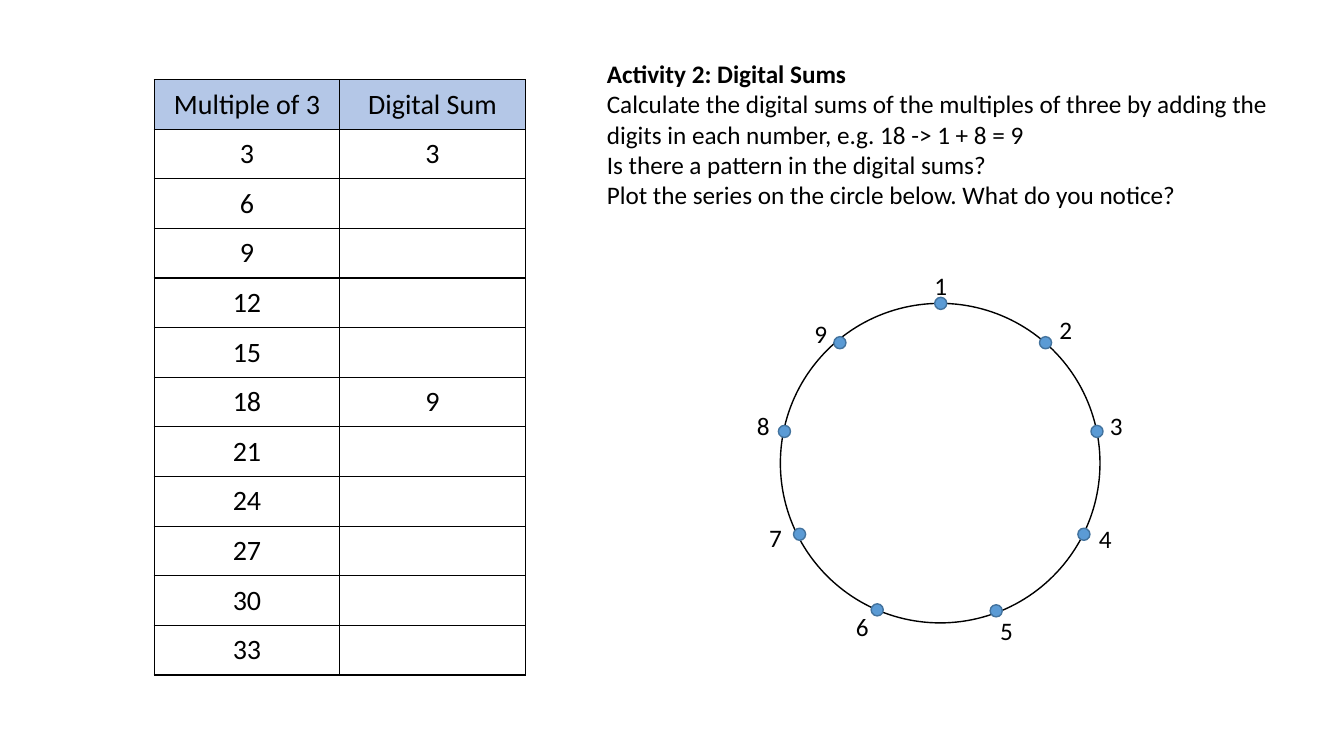
"""Build the digital sums activity slide with a table and a nine-point circle."""
from lxml.etree import SubElement
from pptx import Presentation
from pptx.dml.color import RGBColor
from pptx.enum.shapes import MSO_SHAPE
from pptx.enum.text import MSO_ANCHOR, MSO_AUTO_SIZE, PP_ALIGN
from pptx.oxml import parse_xml
from pptx.oxml.ns import nsdecls, qn
from pptx.util import Inches, Pt


def color(hex_value):
    return RGBColor.from_string(hex_value)


def format_paragraph(paragraph, text, size, bold=False):
    paragraph.text = text
    paragraph.font.name = "Calibri"
    paragraph.font.size = Pt(size)
    paragraph.font.bold = bold
    paragraph.font.color.rgb = color("000000")


presentation = Presentation()
presentation.slide_width = Inches(13.33)
presentation.slide_height = Inches(7.5)
slide = presentation.slides.add_slide(presentation.slide_layouts[6])

known_sums = {3: "3", 18: "9"}
rows = [("Multiple of 3", "Digital Sum")]
rows += [(str(multiple), known_sums.get(multiple, "")) for multiple in range(3, 34, 3)]
table = slide.shapes.add_table(
    len(rows), 2, Inches(1.53), Inches(0.79), Inches(3.68), Inches(5.91)
).table
table.horz_banding = False
for row_index, row in enumerate(rows):
    for column_index, text in enumerate(row):
        cell = table.cell(row_index, column_index)
        cell.vertical_anchor = MSO_ANCHOR.MIDDLE
        paragraph = cell.text_frame.paragraphs[0]
        format_paragraph(paragraph, text, 20)
        paragraph.alignment = PP_ALIGN.CENTER
        properties = cell._tc.get_or_add_tcPr()
        for side in ("lnL", "lnR", "lnT", "lnB"):
            properties.append(parse_xml(
                f'<a:{side} {nsdecls("a")} w="12700"><a:solidFill>'
                f'<a:srgbClr val="000000"/></a:solidFill></a:{side}>'
            ))
        if row_index == 0:
            cell.fill.solid()
            cell.fill.fore_color.rgb = color("B4C7E7")
        else:
            cell.fill.background()

instructions = [
    "Activity 2: Digital Sums",
    "Calculate the digital sums of the multiples of three by adding the digits "
    "in each number, e.g. 18 -> 1 + 8 = 9",
    "Is there a pattern in the digital sums?",
    "Plot the series on the circle below. What do you notice?",
]
text_box = slide.shapes.add_textbox(Inches(5.92), Inches(0.53), Inches(7.22), Inches(1.62))
text_frame = text_box.text_frame
text_frame.word_wrap = True
text_frame.auto_size = MSO_AUTO_SIZE.SHAPE_TO_FIT_TEXT
for index, text in enumerate(instructions):
    paragraph = text_frame.add_paragraph() if index else text_frame.paragraphs[0]
    format_paragraph(paragraph, text, 18, bold=index == 0)

diagram = slide.shapes.add_group_shape()
circle = diagram.shapes.add_shape(
    MSO_SHAPE.OVAL, Inches(7.74), Inches(3.01), Inches(3.17), Inches(3.17)
)
circle.shadow.inherit = False
circle.fill.background()
circle.line.color.rgb = color("000000")
circle.line.width = Pt(1)

dot_positions = [
    (9.27, 2.95), (10.31, 3.34), (10.82, 4.22), (10.69, 5.24), (9.82, 6),
    (8.64, 5.99), (7.87, 5.24), (7.72, 4.22), (8.27, 3.34),
]
label_positions = [
    (9.17, 2.63), (10.41, 3.07), (10.91, 4.02), (10.8, 5.14), (9.82, 6.06),
    (8.39, 6.02), (7.53, 5.13), (7.41, 4.02), (7.98, 3.11),
]
for left, top in dot_positions:
    dot = diagram.shapes.add_shape(
        MSO_SHAPE.OVAL, Inches(left), Inches(top), Inches(0.12), Inches(0.12)
    )
    dot.shadow.inherit = False
    dot.fill.solid()
    dot.fill.fore_color.rgb = color("5B9BD5")
    dot.line.color.rgb = color("43739E")
    dot.line.width = Pt(1)

for number, (left, top) in enumerate(label_positions, start=1):
    label = diagram.shapes.add_textbox(Inches(left), Inches(top), Inches(0.33), Inches(0.4))
    label.text_frame.word_wrap = False
    label.text_frame.auto_size = MSO_AUTO_SIZE.SHAPE_TO_FIT_TEXT
    format_paragraph(label.text_frame.paragraphs[0], str(number), 18)

presentation.save("out.pptx")
